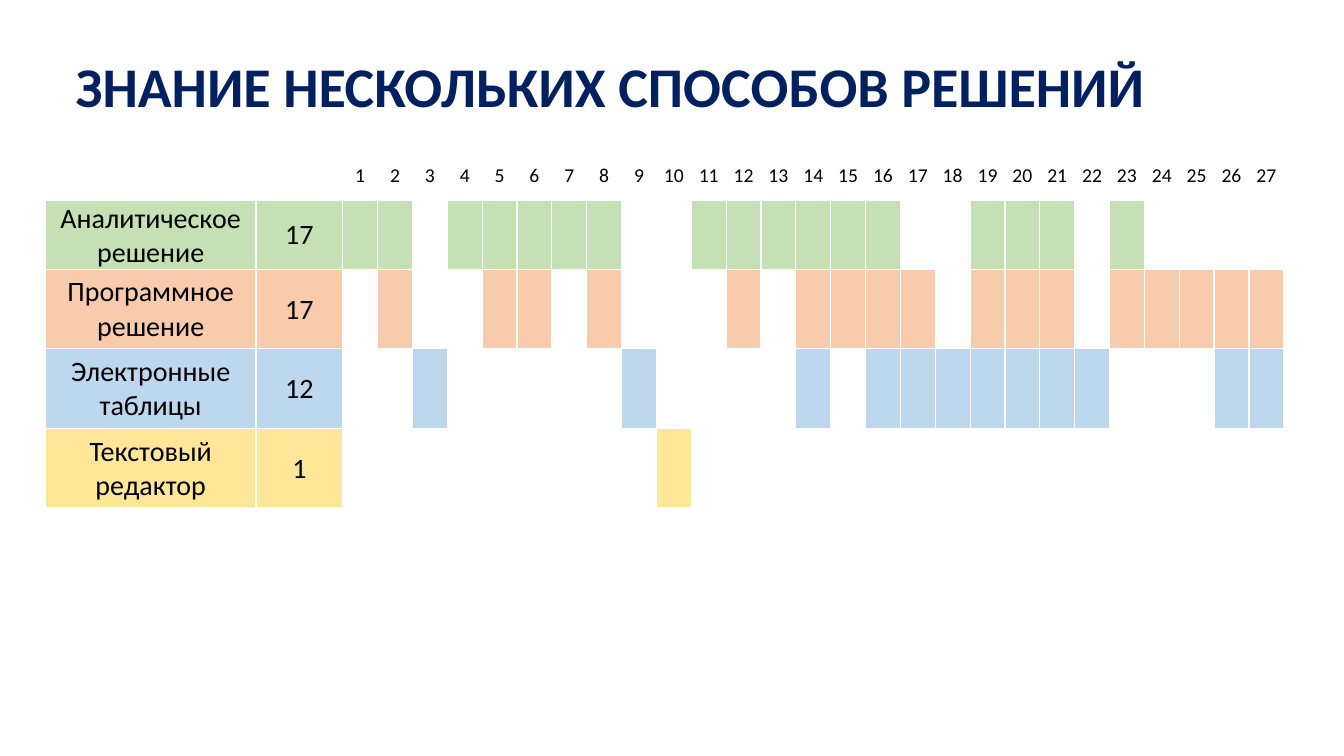
from dataclasses import dataclass

import lxml.etree
import pptx
import pptx.dml.color
import pptx.enum.text
import pptx.oxml.ns
import pptx.table
import pptx.text.text
import pptx.util

FONT = "Calibri"
TASK_COUNT = 27
TABLE_LEFT, TABLE_TOP, TABLE_WIDTH = 0.45, 1.49, 12.29
LABEL_WIDTHS = [2.09, 0.86]
TASK_WIDTH = (TABLE_WIDTH - sum(LABEL_WIDTHS)) / TASK_COUNT
COLUMN_WIDTHS = LABEL_WIDTHS + [TASK_WIDTH] * TASK_COUNT
ROW_HEIGHTS = [0.5, 0.68, 0.79, 0.79, 0.79]


@dataclass
class Method:
    name: str
    color: str
    tasks: list[int]


METHODS = [
    Method("Аналитическое решение", "C5E0B4",
           [1, 2, *range(4, 9), *range(11, 17), 19, 20, 21, 23]),
    Method("Программное решение", "F8CBAD",
           [2, 5, 6, 8, 12, *range(14, 18), 19, 20, 21, *range(23, 28)]),
    Method("Электронные таблицы", "BDD7EE", [3, 9, 14, *range(16, 23), 26, 27]),
    Method("Текстовый редактор", "FFE699", [10]),
]


def rgb(color: str) -> pptx.dml.color.RGBColor:
    return pptx.dml.color.RGBColor.from_string(color)


def format_text(para: pptx.text.text._Paragraph, size: float, color: str,
                bold: bool = False) -> None:
    for span in para.runs:
        span.font.name = FONT
        span.font.size = pptx.util.Pt(size)
        span.font.bold = bold
        span.font.color.rgb = rgb(color)


def write_cell(cell: pptx.table._Cell, text: str, size: float) -> None:
    cell.vertical_anchor = pptx.enum.text.MSO_ANCHOR.MIDDLE
    cell.margin_left = cell.margin_right = cell.margin_top = pptx.util.Inches(0.01)
    cell.margin_bottom = 0
    para = cell.text_frame.paragraphs[0]
    para.text = text
    para.alignment = pptx.enum.text.PP_ALIGN.CENTER
    format_text(para, size, "000000")


def add_borders(cell: pptx.table._Cell, color: str, width: float) -> None:
    qn = pptx.oxml.ns.qn
    properties = cell._tc.get_or_add_tcPr()
    for side in ("a:lnL", "a:lnR", "a:lnT", "a:lnB"):
        line = lxml.etree.SubElement(properties, qn(side), w=str(pptx.util.Pt(width)))
        fill = lxml.etree.SubElement(line, qn("a:solidFill"))
        lxml.etree.SubElement(fill, qn("a:srgbClr"), val=color)


def add_title(page: pptx.slide.Slide, text: str) -> None:
    title = page.shapes.title
    title.left, title.top = pptx.util.Inches(0.65), pptx.util.Inches(0.46)
    title.width, title.height = pptx.util.Inches(11.82), pptx.util.Inches(0.77)
    frame = title.text_frame
    frame.text = text
    frame.word_wrap = True
    frame.auto_size = pptx.enum.text.MSO_AUTO_SIZE.SHAPE_TO_FIT_TEXT
    frame.vertical_anchor = pptx.enum.text.MSO_ANCHOR.TOP
    frame.paragraphs[0].alignment = pptx.enum.text.PP_ALIGN.LEFT
    format_text(frame.paragraphs[0], 40, "002060", bold=True)


def add_method_table(page: pptx.slide.Slide) -> None:
    table = page.shapes.add_table(
        len(ROW_HEIGHTS), len(COLUMN_WIDTHS),
        pptx.util.Inches(TABLE_LEFT), pptx.util.Inches(TABLE_TOP),
        pptx.util.Inches(TABLE_WIDTH), pptx.util.Inches(sum(ROW_HEIGHTS))).table
    table.first_row = table.horz_banding = False
    for column, width in zip(table.columns, COLUMN_WIDTHS):
        column.width = pptx.util.Inches(width)
    for row, height in zip(table.rows, ROW_HEIGHTS):
        row.height = pptx.util.Inches(height)

    # Plain cells with white borders
    for cell in table.iter_cells():
        add_borders(cell, "FFFFFF", 1)
        cell.fill.background()

    # Task numbers across the top
    first_task = len(LABEL_WIDTHS)
    for task in range(1, TASK_COUNT + 1):
        write_cell(table.cell(0, first_task + task - 1), str(task), 14)

    # One row per method: name, task count, coloured tasks
    for row_index, method in enumerate(METHODS, start=1):
        write_cell(table.cell(row_index, 0), method.name, 20)
        write_cell(table.cell(row_index, 1), str(len(method.tasks)), 20)
        for column_index in [0, 1] + [first_task + task - 1 for task in method.tasks]:
            cell = table.cell(row_index, column_index)
            cell.fill.solid()
            cell.fill.fore_color.rgb = rgb(method.color)


def main() -> None:
    deck = pptx.Presentation()
    deck.slide_width, deck.slide_height = pptx.util.Inches(13.33), pptx.util.Inches(7.5)
    page = deck.slides.add_slide(deck.slide_layouts.get_by_name("Title Only"))
    add_title(page, "ЗНАНИЕ НЕСКОЛЬКИХ СПОСОБОВ РЕШЕНИЙ")
    add_method_table(page)
    deck.save("out.pptx")


if __name__ == "__main__":
    main()
